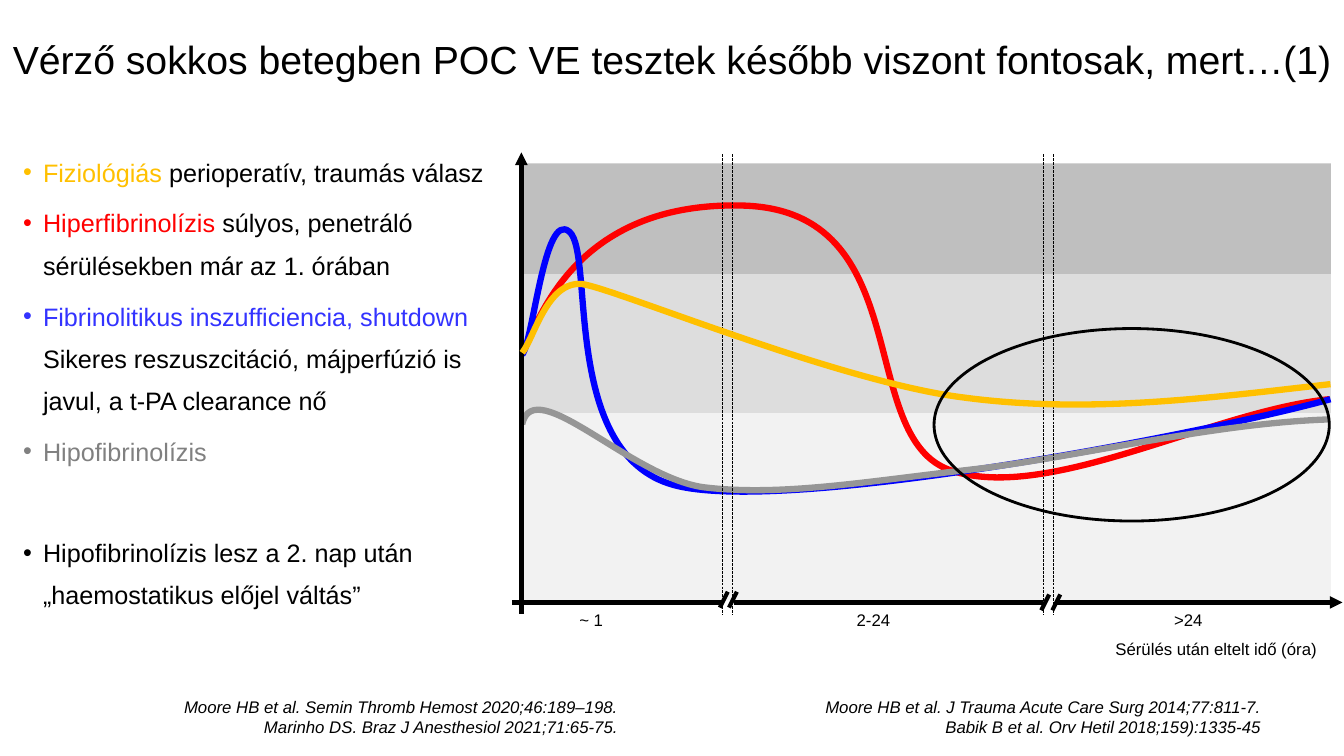
from dataclasses import dataclass

from lxml import etree
from pptx import Presentation
from pptx.dml.color import RGBColor
from pptx.enum.dml import MSO_LINE
from pptx.enum.shapes import MSO_CONNECTOR, MSO_SHAPE
from pptx.enum.text import MSO_ANCHOR, MSO_AUTO_SIZE, PP_ALIGN
from pptx.oxml.ns import qn
from pptx.util import Cm, Pt

STRAIGHT = MSO_CONNECTOR.STRAIGHT
RECTANGLE, OVAL = MSO_SHAPE.RECTANGLE, MSO_SHAPE.OVAL
LONG_DASH = MSO_LINE.LONG_DASH
CENTER, LEFT, RIGHT = PP_ALIGN.CENTER, PP_ALIGN.LEFT, PP_ALIGN.RIGHT
TOP, MIDDLE = MSO_ANCHOR.TOP, MSO_ANCHOR.MIDDLE
NO_AUTOFIT, FIT_TEXT = MSO_AUTO_SIZE.NONE, MSO_AUTO_SIZE.SHAPE_TO_FIT_TEXT


@dataclass(frozen=True)
class Theme:
    font: str = "Arial"
    title_size: int = 28
    body_size: int = 18
    small_size: int = 12
    black: str = "000000"
    white: str = "FFFFFF"
    physiological: str = "FFC000"
    hyper: str = "FF0000"
    shutdown_text: str = "3333FF"
    shutdown_curve: str = "0000FF"
    hypo_text: str = "808080"
    hypo_curve: str = "969696"
    curve_width: float = 4.5
    axis_width: float = 3
    ellipse_width: float = 2
    dash_width: float = 0.25


THEME = Theme()

# Content; all lengths in cm
TITLE = "Vérző sokkos betegben POC VE tesztek később viszont fontosak, mert…(1)"
# (coloured lead, its colour, black rest, extra space before in points)
BULLETS = [
    ("Fiziológiás ", THEME.physiological, "perioperatív, traumás válasz", 0),
    ("Hiperfibrinolízis ", THEME.hyper,
     "súlyos, penetráló sérülésekben már az 1. órában", 0),
    ("Fibrinolitikus inszufficiencia, shutdown ", THEME.shutdown_text,
     "Sikeres reszuszcitáció, májperfúzió is javul, a t-PA clearance nő", 0),
    ("Hipofibrinolízis", THEME.hypo_text, "", 0),
    ("", THEME.black,
     "Hipofibrinolízis lesz a 2. nap után „haemostatikus előjel váltás”", 36),
]
CITATIONS = [
    ((20.45, 17.44, 11.58, 1.27),
     ["Moore HB et al. J Trauma Acute Care Surg 2014;77:811-7.",
      "Babik B et al. Orv Hetil 2018;159):1335-45"]),
    ((4.3, 17.42, 11.53, 1.27),
     ["Moore HB et al. Semin Thromb Hemost 2020;46:189–198.",
      "Marinho DS. Braz J Anesthesiol 2021;71:65-75."]),
]
TIME_LABELS = [
    ("Sérülés után eltelt idő (óra)", (27.86, 15.98, 5.64, 0.76)),
    ("~ 1", (14.35, 15.24, 1.24, 0.76)),
    ("2-24", (21.34, 15.24, 1.37, 0.76)),
    (">24", (29.34, 15.24, 1.24, 0.76)),
]
PLOT_LEFT, PLOT_TOP, PLOT_WIDTH = 13.14, 4.12, 20.4
BANDS = [("BFBFBF", 2.79), ("DDDDDD", 3.5), ("F2F2F2", 4.72)]  # colour, height
# Cubic curves: a start point, then two control points and an end per piece
BACK_CURVES = [
    (THEME.hyper, [
        (13.16, 8.89), (13.46, 8.53), (14.2, 5.08), (18.69, 5.18),
        (23.19, 5.28), (21.51, 11.05), (23.98, 11.86),
        (26.44, 12.67), (30.53, 10.36), (33.5, 10.06)]),
    (THEME.shutdown_curve, [
        (13.16, 8.94), (13.44, 8.59), (13.72, 5.28), (14.35, 5.84),
        (14.99, 6.38), (14.12, 11.43), (16.97, 12.22),
        (19.79, 13), (30.63, 10.87), (33.53, 10.06)]),
    (THEME.hypo_curve, [
        (13.16, 10.69), (13.46, 9.35), (15.98, 12.12), (17.83, 12.29),
        (19.71, 12.5), (21.79, 12.14), (24.41, 11.84),
        (27, 11.56), (30.48, 10.67), (33.48, 10.57)]),
]
PHYSIOLOGICAL_CURVE = [
    (13.16, 8.89), (13.46, 8.53), (13.79, 7.06), (14.68, 7.16),
    (15.54, 7.29), (21.08, 9.6), (24.23, 10.01),
    (27.38, 10.44), (30.45, 10.03), (33.53, 9.68)]
TIME_AXIS_Y = 15.18
TIME_AXIS_PARTS = [(12.9, 18.21), (18.49, 26.29), (26.62, 33.83)]
BREAK_SLASHES = [(18.34, 14.91), (18.57, 14.91), (26.44, 14.98), (26.72, 14.98)]
BREAK_GUIDES = [18.21, 18.46, 26.29, 26.54]
LATE_PHASE = (23.54, 8.28, 9.96, 4.85)

prs = Presentation()
prs.slide_width, prs.slide_height = Cm(33.87), Cm(19.05)
slide = prs.slides.add_slide(prs.slide_layouts[1])
shapes = slide.shapes


def color(code):
    return RGBColor.from_string(code)


def place(shape, box):
    shape.left, shape.top, shape.width, shape.height = map(Cm, box)


def set_font(paragraph, size, italic=None):
    font = paragraph.font
    font.name, font.size, font.italic = THEME.font, Pt(size), italic
    font.color.rgb = color(THEME.black)


def add_line(start, end, width, arrow=False, dash=None):
    line = shapes.add_connector(STRAIGHT, *map(Cm, start + end))
    line.line.color.rgb = color(THEME.black)
    line.line.width = Pt(width)
    if dash:
        line.line.dash_style = dash
    if arrow:
        etree.SubElement(line.line._get_or_add_ln(), qn("a:tailEnd"), type="triangle")
    etree.SubElement(line._element.spPr, qn("a:effectLst"))


def add_curve(points, code):
    builder = shapes.build_freeform(*map(Cm, points[0]))
    builder.add_line_segments([tuple(map(Cm, p)) for p in points[3::3]], close=False)
    curve = builder.convert_to_shape()
    # Turn each straight piece into a cubic one
    for i, piece in enumerate(list(curve._element.iter(qn("a:lnTo")))):
        cubic = etree.Element(qn("a:cubicBezTo"))
        for x, y in points[3 * i + 1:3 * i + 4]:
            etree.SubElement(cubic, qn("a:pt"),
                             x=str(Cm(x) - curve.left), y=str(Cm(y) - curve.top))
        piece.getparent().replace(piece, cubic)
    curve.shadow.inherit = False
    curve.fill.background()
    curve.line.color.rgb = color(code)
    curve.line.width = Pt(THEME.curve_width)


def add_small_text(box, lines, align, italic=None):
    text_box = shapes.add_textbox(*map(Cm, box))
    frame = text_box.text_frame
    frame.word_wrap = False
    frame.auto_size = FIT_TEXT
    frame.text = "\n".join(lines)
    for paragraph in frame.paragraphs:
        paragraph.alignment = align
        set_font(paragraph, THEME.small_size, italic)
    return text_box


# Title
title = shapes.title
place(title, (0, 0.76, 33.87, 2.16))
title.text_frame.text = TITLE
title.text_frame.auto_size = NO_AUTOFIT
title.text_frame.vertical_anchor = TOP
title.text_frame.margin_top = Cm(0.13)
title.text_frame.paragraphs[0].alignment = CENTER
set_font(title.text_frame.paragraphs[0], THEME.title_size)

# Bullet list
body = slide.placeholders[1]
place(body, (0.33, 3.53, 12.19, 11.96))
body_frame = body.text_frame
body_frame.auto_size = NO_AUTOFIT
body_frame.vertical_anchor = MIDDLE
for i, (lead, lead_color, rest, gap) in enumerate(BULLETS):
    bullet = body_frame.add_paragraph() if i else body_frame.paragraphs[0]
    bullet.alignment = LEFT
    bullet.line_spacing = 1.4
    bullet.space_before, bullet.space_after = Pt(gap), Pt(6)
    set_font(bullet, THEME.body_size)
    properties = bullet._p.get_or_add_pPr()
    properties.set("marL", str(Cm(0.5)))
    properties.set("indent", str(-Cm(0.5)))
    for words, code in ((lead, lead_color), (rest, THEME.black)):
        if words:
            run = bullet.add_run()
            run.text = words
            run.font.color.rgb = color(code)

# Background bands
band_top = PLOT_TOP
for code, height in BANDS:
    band = shapes.add_shape(RECTANGLE, *map(Cm, (PLOT_LEFT, band_top, PLOT_WIDTH, height)))
    band.shadow.inherit = False
    band.fill.solid()
    band.fill.fore_color.rgb = color(code)
    band.line.fill.background()
    band_top += height

# Curves behind the axes
for code, points in BACK_CURVES:
    add_curve(points, code)

# Time labels
for words, box in TIME_LABELS:
    label = add_small_text(box, [words], LEFT)
    label.fill.solid()
    label.fill.fore_color.rgb = color(THEME.white)

# Axes, with breaks in the time axis
add_line((PLOT_LEFT, 15.47), (PLOT_LEFT, 3.84), THEME.axis_width, arrow=True)
for start, end in TIME_AXIS_PARTS:
    add_line((start, TIME_AXIS_Y), (end, TIME_AXIS_Y), THEME.axis_width,
             arrow=end == TIME_AXIS_PARTS[-1][1])
for x, y in BREAK_SLASHES:
    add_line((x, y), (x - 0.2, y + 0.4), THEME.axis_width)
for x in BREAK_GUIDES:
    add_line((x, 3.89), (x, 15.49), THEME.dash_width, dash=LONG_DASH)

# Front curve and the late phase
add_curve(PHYSIOLOGICAL_CURVE, THEME.physiological)
late_phase = shapes.add_shape(OVAL, *map(Cm, LATE_PHASE))
late_phase.shadow.inherit = False
late_phase.fill.background()
late_phase.line.color.rgb = color(THEME.black)
late_phase.line.width = Pt(THEME.ellipse_width)

# Citations
for box, lines in CITATIONS:
    add_small_text(box, lines, RIGHT, italic=True)

prs.save("out.pptx")
